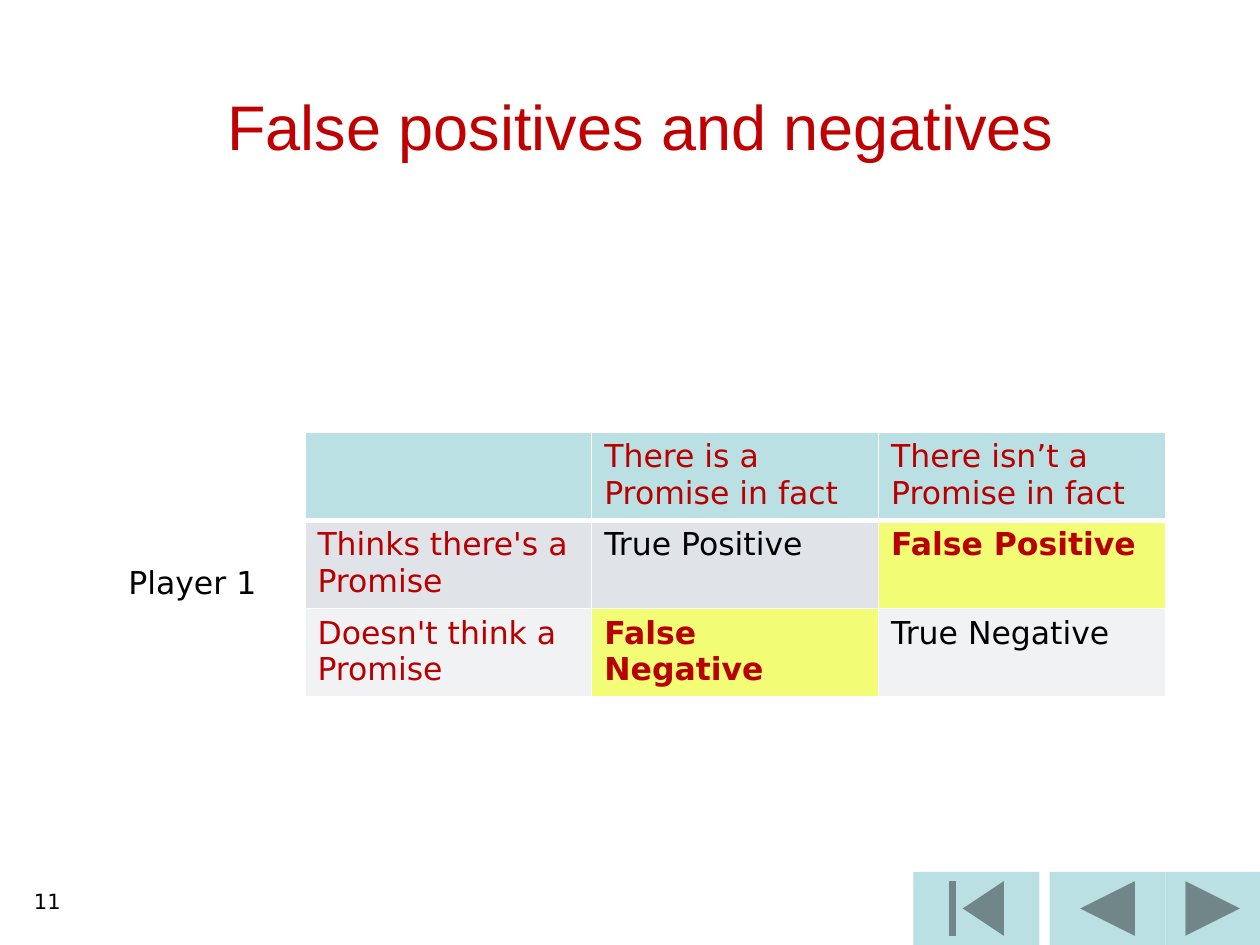
from lxml.etree import SubElement
from pptx import Presentation
from pptx.dml.color import RGBColor
from pptx.enum.shapes import MSO_SHAPE
from pptx.enum.text import MSO_ANCHOR, PP_ALIGN
from pptx.oxml.ns import qn
from pptx.util import Inches, Pt

COLORS = {
    "title": "C00000", "accent": "B90000", "text": "000000", "border": "FFFFFF",
    "header": "BBE0E3", "band1": "E0E4E9", "band2": "F0F2F4", "highlight": "F2FC74",
}
BODY = {"name": "DejaVu Sans", "size": Pt(18), "bold": False}

ROWS = [
    ["", "There is a Promise in fact", "There isn’t a Promise in fact"],
    ["Thinks there's a Promise", "True Positive", "False Positive"],
    ["Doesn't think a Promise", "False Negative", "True Negative"],
]
ROW_FILLS = ["header", "band1", "band2"]

BUTTONS = [
    (MSO_SHAPE.ACTION_BUTTON_BACK_OR_PREVIOUS, 8.33, 0.92),
    (MSO_SHAPE.ACTION_BUTTON_BEGINNING, 7.25, 1),
    (MSO_SHAPE.ACTION_BUTTON_FORWARD_OR_NEXT, 9.25, 0.75),
]


def rgb(key):
    return RGBColor.from_string(COLORS[key])


def write(tf, text, color="text", align=None, **fmt):
    p = tf.paragraphs[0]
    p.alignment = align
    r = p.add_run()
    r.text = text
    for name, value in {**BODY, **fmt}.items():
        setattr(r.font, name, value)
    r.font.color.rgb = rgb(color)


def add_title(slide, box):
    sp = slide.shapes.title
    sp.left, sp.top, sp.width, sp.height = map(Inches, box)
    sp.text_frame.vertical_anchor = MSO_ANCHOR.MIDDLE
    write(sp.text_frame, "False positives and negatives", "title",
          PP_ALIGN.CENTER, name="Arial", size=Pt(36))


def add_label(slide, box, text, **fmt):
    tf = slide.shapes.add_textbox(*map(Inches, box)).text_frame
    tf.word_wrap = True
    write(tf, text, **fmt)


def set_borders(cell, top, bottom):
    tcPr = cell._tc.get_or_add_tcPr()
    for i, (side, width) in enumerate(zip("LRTB", (1, 1, top, bottom))):
        ln = SubElement(tcPr, qn(f"a:ln{side}"), w=str(Pt(width)))
        fill = SubElement(ln, qn("a:solidFill"))
        SubElement(fill, qn("a:srgbClr"), val=COLORS["border"])
        tcPr.insert(i, ln)  # borders come before the cell fill


def add_matrix(slide, box):
    """Outcome table: thick rule under the header, false outcomes highlighted."""
    table = slide.shapes.add_table(len(ROWS), len(ROWS[0]), *map(Inches, box)).table
    for i, row in enumerate(ROWS):
        for j, text in enumerate(row):
            cell = table.cell(i, j)
            false = text.startswith("False")
            cell.fill.solid()
            cell.fill.fore_color.rgb = rgb("highlight" if false else ROW_FILLS[i])
            set_borders(cell, 3 if i == 1 else 1, 3 if i == 0 else 1)
            if text:
                heading = i == 0 or j == 0
                write(cell.text_frame, text,
                      "accent" if heading or false else "text", bold=false)


def add_navigation(slide, top, height):
    for kind, left, width in BUTTONS:
        sp = slide.shapes.add_shape(kind, *map(Inches, (left, top, width, height)))
        sp.shadow.inherit = False
        sp.fill.solid()
        sp.fill.fore_color.rgb = rgb("header")
        sp.line.fill.background()


def main():
    prs = Presentation()
    prs.slide_width, prs.slide_height = Inches(10), Inches(7.5)
    slide = prs.slides.add_slide(prs.slide_layouts[5])
    add_navigation(slide, 6.92, 0.58)
    add_title(slide, (0.17, 0.33, 9.83, 1.33))
    add_matrix(slide, (2.42, 3.43, 6.83, 2.1))
    add_label(slide, (0, 7, 0.58, 0.5), "11", align=PP_ALIGN.RIGHT, size=Pt(12))
    add_label(slide, (0.92, 4.42, 1.42, 0.4), "Player 1")
    prs.save("out.pptx")


if __name__ == "__main__":
    main()
